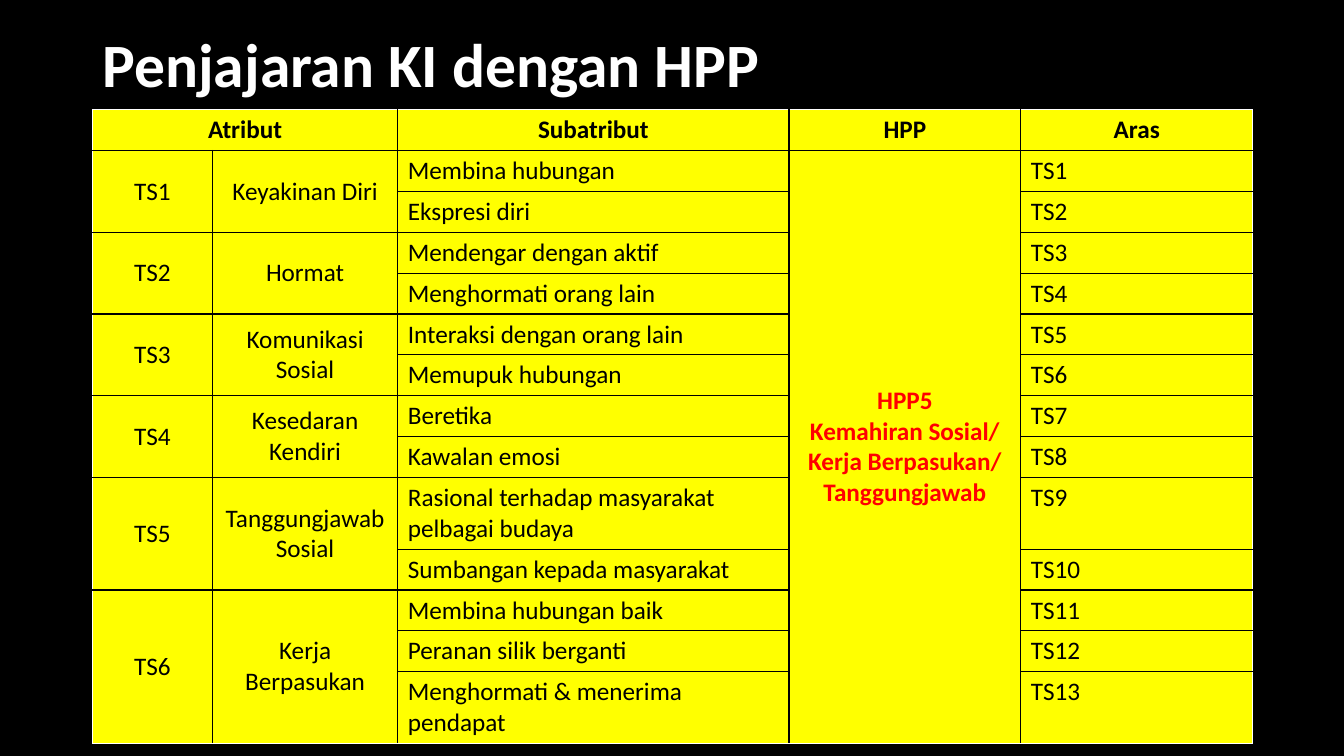
from lxml.etree import SubElement
from pptx import Presentation
from pptx.dml.color import RGBColor
from pptx.enum.text import MSO_ANCHOR as Anchor, PP_ALIGN as Align
from pptx.oxml.ns import qn
from pptx.util import Pt

BLACK = RGBColor(0x00, 0x00, 0x00)
WHITE = RGBColor(0xFF, 0xFF, 0xFF)
YELLOW = RGBColor(0xFF, 0xFF, 0x00)
RED = RGBColor(0xFF, 0x00, 0x00)
FONT = "Calibri"

HEADINGS = {0: "Atribut", 2: "Subatribut", 3: "HPP", 4: "Aras"}
ATTRIBUTES = [
    ("Keyakinan Diri", ["Membina hubungan", "Ekspresi diri"]),
    ("Hormat", ["Mendengar dengan aktif", "Menghormati orang lain"]),
    ("Komunikasi Sosial", ["Interaksi dengan orang lain", "Memupuk hubungan"]),
    ("Kesedaran Kendiri", ["Beretika", "Kawalan emosi"]),
    ("Tanggungjawab Sosial", ["Rasional terhadap masyarakat pelbagai budaya",
                              "Sumbangan kepada masyarakat"]),
    ("Kerja Berpasukan", ["Membina hubungan baik", "Peranan silik berganti",
                          "Menghormati & menerima pendapat"]),
]
HPP = ["HPP5", "Kemahiran Sosial/ Kerja Berpasukan/ Tanggungjawab"]
COLUMN_WIDTHS = [85.7, 132.5, 279.4, 165.6, 165.6]
HEADING_HEIGHT, FIRST_HEIGHT, ROW_HEIGHT = 29.2, 28.8, 26.6


def write(frame, lines, size, color, bold=False, align=Align.LEFT):
    for index, line in enumerate(lines):
        paragraph = frame.paragraphs[0] if index == 0 else frame.add_paragraph()
        paragraph.alignment = align
        run = paragraph.add_run()
        run.text = line
        run.font.name, run.font.size, run.font.bold = FONT, Pt(size), bold
        run.font.color.rgb = color


def add_title(slide, left, top, width, height):
    title = slide.shapes.title
    title.left, title.top = Pt(left), Pt(top)
    title.width, title.height = Pt(width), Pt(height)
    title.text_frame.vertical_anchor = Anchor.MIDDLE
    write(title.text_frame, ["Penjajaran KI dengan HPP"], 44, WHITE, bold=True)
    title.text_frame.paragraphs[0].line_spacing = 0.9


def draw_borders(table, row, column):
    """Rule a cell in black, and in white along the edge of the table."""
    cell = table.cell(row, column)
    at_edge = {
        "a:lnL": column == 0,
        "a:lnR": column + cell.span_width == len(table.columns),
        "a:lnT": row == 0,
        "a:lnB": row + cell.span_height == len(table.rows),
    }
    properties = cell._tc.get_or_add_tcPr()
    for side, outer in at_edge.items():
        line = SubElement(properties, qn(side), w=str(Pt(1)))
        fill = SubElement(line, qn("a:solidFill"))
        SubElement(fill, qn("a:srgbClr"), val=str(WHITE if outer else BLACK))


def fill_cell(table, row, column, lines, rows=1, columns=1, color=BLACK,
              bold=False, align=Align.CENTER, anchor=Anchor.MIDDLE):
    cell = table.cell(row, column)
    if rows * columns > 1:
        cell.merge(table.cell(row + rows - 1, column + columns - 1))
    cell.vertical_anchor = anchor
    write(cell.text_frame, lines, 18, color, bold, align)


def add_attribute_table(slide, left, top):
    row_count = 1 + sum(len(parts) for _, parts in ATTRIBUTES)
    heights = [HEADING_HEIGHT, FIRST_HEIGHT] + [ROW_HEIGHT] * (row_count - 2)
    table = slide.shapes.add_table(
        row_count, len(COLUMN_WIDTHS), Pt(left), Pt(top),
        Pt(sum(COLUMN_WIDTHS)), Pt(sum(heights))).table
    table.first_row = table.horz_banding = False
    for column, width in zip(table.columns, COLUMN_WIDTHS):
        column.width = Pt(width)
    for row, height in zip(table.rows, heights):
        row.height = Pt(height)

    # Headings
    for column, heading in HEADINGS.items():
        fill_cell(table, 0, column, [heading], columns=2 if column == 0 else 1,
                  bold=True, anchor=Anchor.TOP)

    # Attributes with their subattributes and levels
    row = 1
    for number, (attribute, subattributes) in enumerate(ATTRIBUTES, 1):
        span = len(subattributes)
        fill_cell(table, row, 0, [f"TS{number}"], rows=span)
        fill_cell(table, row, 1, [attribute], rows=span)
        for subattribute in subattributes:
            for column, content in ((2, subattribute), (4, f"TS{row}")):
                fill_cell(table, row, column, [content],
                          align=Align.LEFT, anchor=Anchor.TOP)
            row += 1

    # Shared outcome
    fill_cell(table, 1, 3, HPP, rows=row_count - 1, color=RED, bold=True)

    # Fills and borders
    for row in range(row_count):
        for column in range(len(COLUMN_WIDTHS)):
            cell = table.cell(row, column)
            if not cell.is_spanned:
                draw_borders(table, row, column)
            cell.fill.solid()
            cell.fill.fore_color.rgb = YELLOW


def main():
    deck = Presentation()
    deck.slide_width, deck.slide_height = Pt(960), Pt(540)
    slide = deck.slides.add_slide(deck.slide_layouts[5])
    slide.background.fill.solid()
    slide.background.fill.fore_color.rgb = BLACK
    add_title(slide, 66, 10.8, 828, 75)
    add_attribute_table(slide, 66, 78.3)
    deck.save("out.pptx")


if __name__ == "__main__":
    main()
